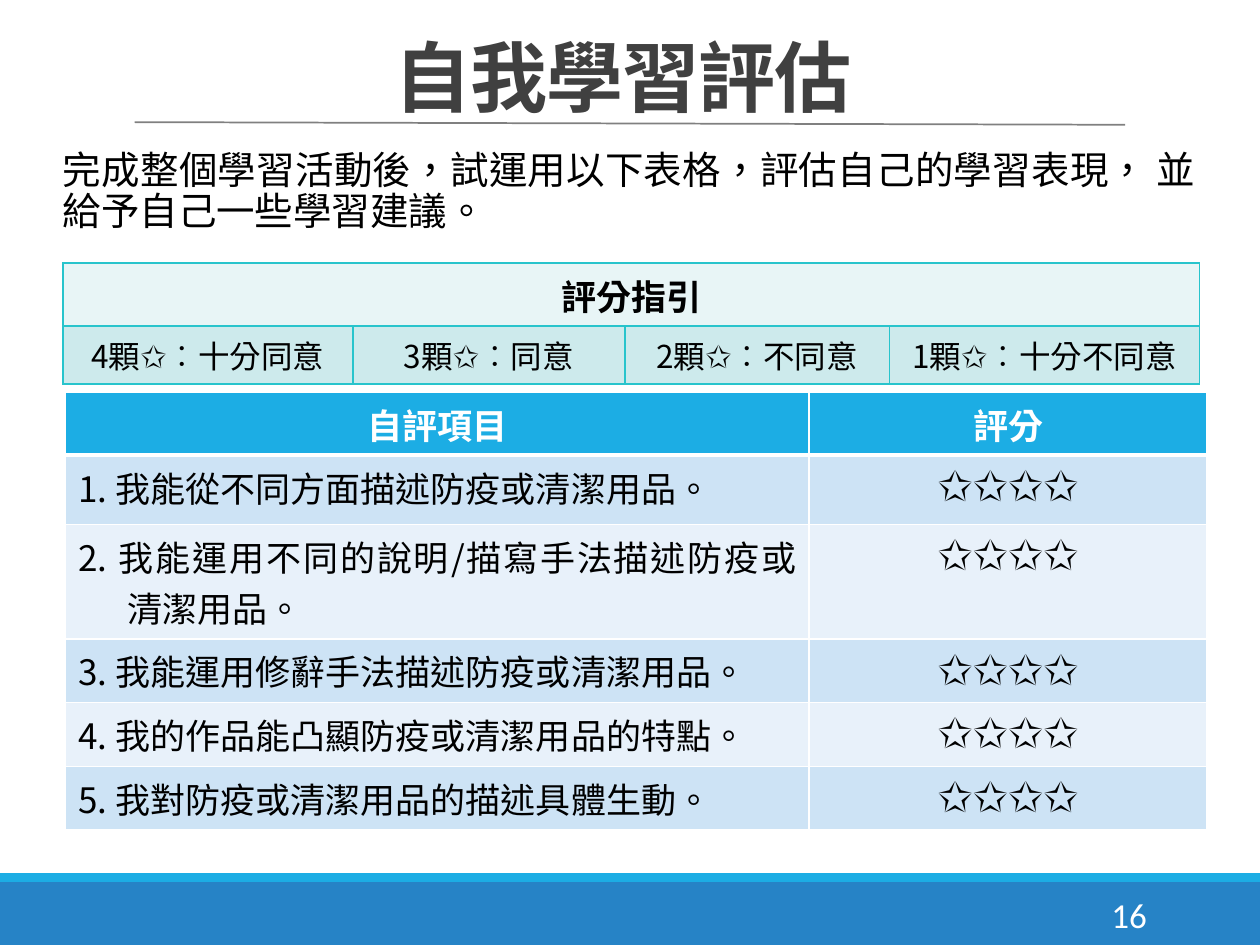
from dataclasses import dataclass
from typing import Optional

from lxml.etree import SubElement
from pptx import Presentation
from pptx.dml.color import RGBColor
from pptx.enum.shapes import MSO_CONNECTOR, MSO_SHAPE
from pptx.enum.text import MSO_ANCHOR, PP_ALIGN
from pptx.oxml.ns import qn
from pptx.util import Pt


@dataclass(frozen=True)
class Theme:
    body_font: str = "Noto Sans CJK SC"
    latin_font: str = "Calibri"
    language: str = "zh-TW"
    white: str = "FFFFFF"
    black: str = "000000"
    title: str = "404040"
    rule: str = "808080"
    footer: str = "2683C6"
    accent: str = "1CADE4"
    band_dark: str = "CDE3F5"
    band_light: str = "E8F1FA"
    guide_border: str = "28C4CC"
    guide_head: str = "E8F5F6"
    guide_body: str = "CDEAEC"
    title_size: float = 44
    intro_size: float = 22
    star_size: float = 24
    table_size: float = 20
    guide_size: float = 18
    page_size: float = 20


THEME = Theme()


@dataclass(frozen=True)
class Box:
    left: float
    top: float
    width: float
    height: float

    def lengths(self) -> tuple:
        return Pt(self.left), Pt(self.top), Pt(self.width), Pt(self.height)


@dataclass(frozen=True)
class TextStyle:
    size: float
    color: str = THEME.black
    font: str = THEME.body_font
    bold: bool = False
    align: PP_ALIGN = PP_ALIGN.CENTER
    line_spacing: Optional[float] = None
    tracking: float = 0
    hanging: float = 0


def write(text_frame, text: str, style: TextStyle) -> None:
    paragraph = text_frame.paragraphs[0]
    paragraph.alignment = style.align
    if style.line_spacing:
        paragraph.line_spacing = style.line_spacing
    if style.hanging:
        properties = paragraph._p.get_or_add_pPr()
        properties.set("marL", str(Pt(style.hanging)))
        properties.set("indent", str(-Pt(style.hanging)))
    run = paragraph.add_run()
    run.text = text
    run.font.size = Pt(style.size)
    run.font.bold = style.bold
    run.font.name = style.font
    run.font.color.rgb = RGBColor.from_string(style.color)
    properties = run._r.get_or_add_rPr()
    properties.set("lang", THEME.language)
    SubElement(properties, qn("a:ea")).set("typeface", style.font)
    if style.tracking:
        properties.set("spc", str(round(style.tracking * 100)))


def add_text(slide, box: Box, text: str, style: TextStyle,
             anchor: MSO_ANCHOR = MSO_ANCHOR.TOP) -> None:
    text_frame = slide.shapes.add_textbox(*box.lengths()).text_frame
    text_frame.word_wrap = True
    text_frame.vertical_anchor = anchor
    write(text_frame, text, style)


def add_band(slide, box: Box, color: str) -> None:
    shape = slide.shapes.add_shape(MSO_SHAPE.RECTANGLE, *box.lengths())
    shape.shadow.inherit = False
    shape.fill.solid()
    shape.fill.fore_color.rgb = RGBColor.from_string(color)
    shape.line.fill.background()


def add_rule(slide, start: tuple[float, float], end: tuple[float, float]) -> None:
    connector = slide.shapes.add_connector(
        MSO_CONNECTOR.STRAIGHT, *(Pt(value) for value in start + end))
    connector.line.color.rgb = RGBColor.from_string(THEME.rule)
    connector.line.width = Pt(1)
    SubElement(connector._element.spPr, qn("a:effectLst"))


def add_grid(slide, left: float, top: float, columns: list[float], rows: list[float]):
    box = Box(left, top, sum(columns), sum(rows))
    table = slide.shapes.add_table(len(rows), len(columns), *box.lengths()).table
    for column, width in zip(table.columns, columns):
        column.width = Pt(width)
    for row, height in zip(table.rows, rows):
        row.height = Pt(height)
    return table


def style_cell(cell, fill: str, border: str, bottom_width: float = 1,
               top_width: float = 1) -> None:
    properties = cell._tc.get_or_add_tcPr()
    widths = {"lnL": 1, "lnR": 1, "lnT": top_width, "lnB": bottom_width}
    for side, width in widths.items():
        line = SubElement(properties, qn(f"a:{side}"), w=str(Pt(width)))
        solid = SubElement(line, qn("a:solidFill"))
        SubElement(solid, qn("a:srgbClr"), val=border)
    cell.fill.solid()
    cell.fill.fore_color.rgb = RGBColor.from_string(fill)


def add_item_table(slide, items: list[str]) -> None:
    table = add_grid(slide, 37.5, 224, [424.8, 227.5], [36, 39.6, 65.5, 36.4, 36.4, 36])
    head = TextStyle(THEME.table_size, THEME.white, bold=True)
    item_style = TextStyle(THEME.table_size, align=PP_ALIGN.JUSTIFY, hanging=28)
    stars = TextStyle(THEME.star_size, font=THEME.latin_font)
    for column, text in enumerate(["自評項目", "評分"]):
        cell = table.cell(0, column)
        style_cell(cell, THEME.accent, THEME.white, bottom_width=3)
        write(cell.text_frame, text, head)
    for number, item in enumerate(items, start=1):
        fill = THEME.band_dark if number % 2 else THEME.band_light
        texts = [(f"{number}. {item}", item_style), ("✩" * 4, stars)]
        for column, (text, style) in enumerate(texts):
            cell = table.cell(number, column)
            style_cell(cell, fill, THEME.white, top_width=3 if number == 1 else 1)
            write(cell.text_frame, text, style)


def add_guide_table(slide, meanings: list[str]) -> None:
    table = add_grid(slide, 36, 150.3, [165.6, 155.5, 151.2, 177.1], [36, 33.2])
    last = len(meanings) - 1
    table.cell(0, 0).merge(table.cell(0, last))
    write(table.cell(0, 0).text_frame, "評分指引", TextStyle(THEME.table_size, bold=True))
    for column, meaning in enumerate(meanings):
        style_cell(table.cell(0, column), THEME.guide_head, THEME.guide_border)
        cell = table.cell(1, column)
        style_cell(cell, THEME.guide_body, THEME.guide_border)
        write(cell.text_frame, f"{len(meanings) - column}顆✩︰{meaning}",
              TextStyle(THEME.guide_size))


def main() -> None:
    presentation = Presentation()
    presentation.slide_width, presentation.slide_height = Pt(720), Pt(540)
    slide = presentation.slides.add_slide(presentation.slide_layouts[6])

    # Footer bands and page number
    add_band(slide, Box(0, 504, 720, 36), THEME.footer)
    add_band(slide, Box(0, 499, 720, 5), THEME.accent)
    add_text(slide, Box(584.6, 508.3, 77.8, 28.8), "16",
             TextStyle(THEME.page_size, THEME.white, THEME.latin_font,
                       align=PP_ALIGN.RIGHT),
             MSO_ANCHOR.MIDDLE)

    # Title and rule
    add_text(slide, Box(59, 21.6, 594, 59.8), "自我學習評估",
             TextStyle(THEME.title_size, THEME.title, bold=True,
                       line_spacing=0.85, tracking=-0.5))
    add_rule(slide, (77, 69.8), (643, 71.3))

    # Self-assessment items
    add_item_table(slide, [
        "我能從不同方面描述防疫或清潔用品。",
        "我能運用不同的說明/描寫手法描述防疫或 清潔用品。",
        "我能運用修辭手法描述防疫或清潔用品。",
        "我的作品能凸顯防疫或清潔用品的特點。",
        "我對防疫或清潔用品的描述具體生動。",
    ])

    # Introduction
    add_text(slide, Box(28.8, 82.8, 661.7, 316.8),
             "完成整個學習活動後，試運用以下表格，評估自己的學習表現， 並給予自己一些學習建議。",
             TextStyle(THEME.intro_size, align=PP_ALIGN.JUSTIFY, line_spacing=0.9))

    # Scoring guide
    add_guide_table(slide, ["十分同意", "同意", "不同意", "十分不同意"])

    presentation.save("out.pptx")


if __name__ == "__main__":
    main()
